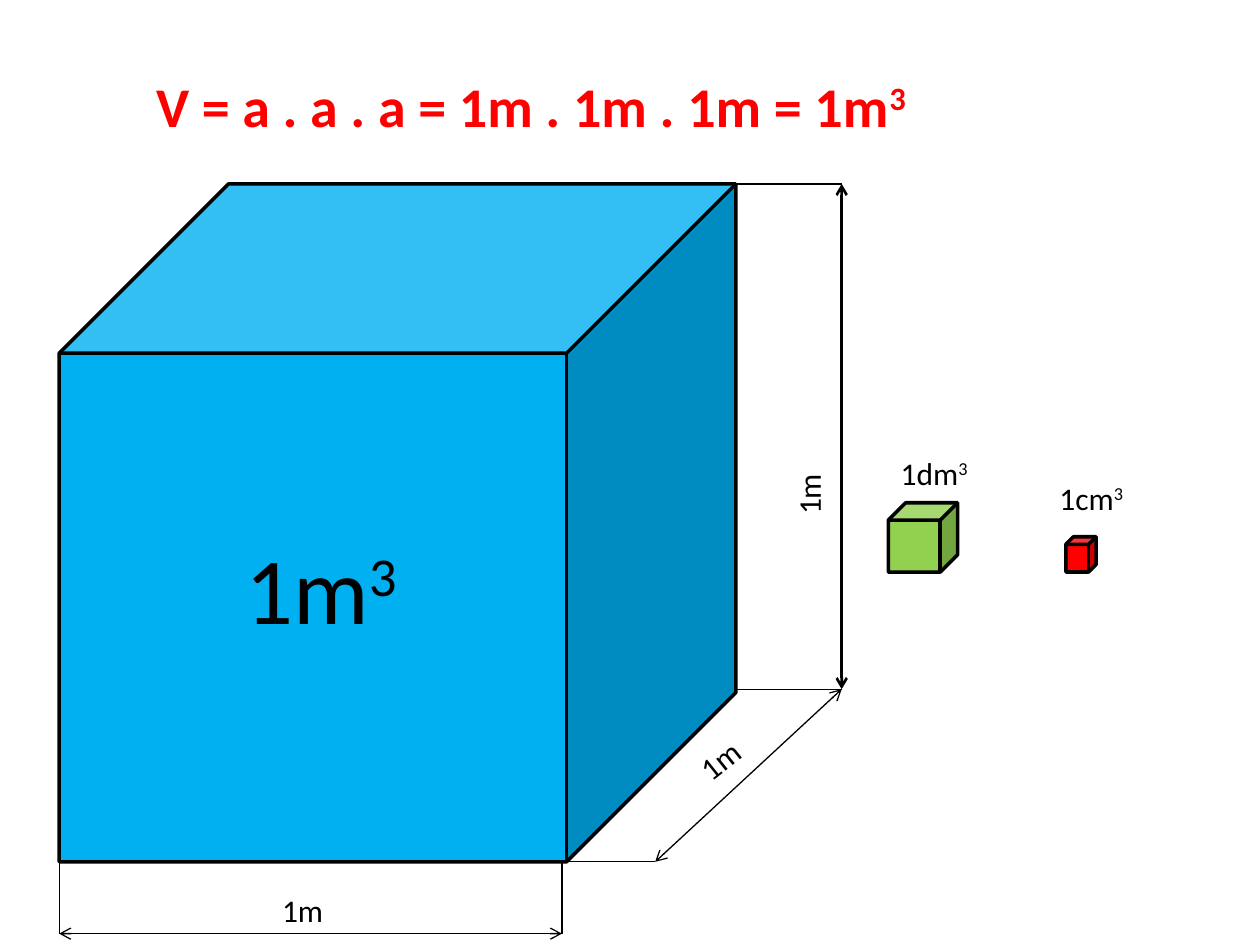
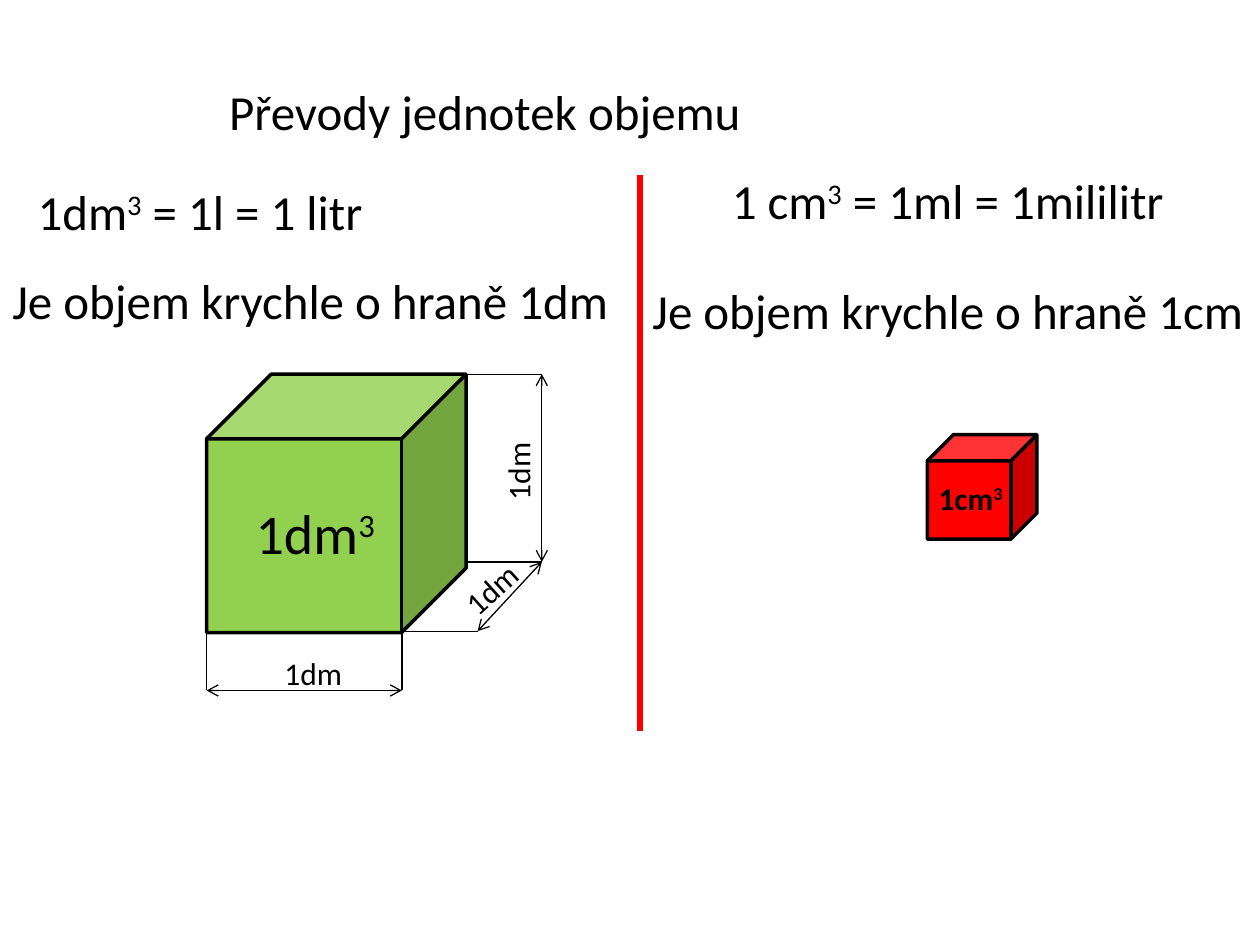
import dataclasses
import itertools

import pptx
import pptx.dml.color
import pptx.enum.shapes
import pptx.oxml.ns
import pptx.util
from lxml import etree

COLUMNS, ROWS = 100, 75
CELL = pptx.util.Inches(0.1)


@dataclasses.dataclass(frozen=True)
class Theme:
    """Colours, font and sizes shared by the slides."""
    font: str = "Calibri"
    ink: str = "000000"
    accent: str = "FF0000"
    metre: str = "00B0F0"
    decimetre: str = "92D050"
    centimetre: str = "FF0000"
    giant: float = 54
    formula: float = 32
    body: float = 28
    label: float = 18
    hairline: float = 0.75
    strong: float = 1.5
    outline: float = 2
    divider: float = 3


@dataclasses.dataclass(frozen=True)
class Dimensions:
    """Corners and labels of the measuring lines, in cells from a cube's corner."""
    near: tuple
    far: tuple
    edge: float
    base: float
    height_label: tuple
    depth_label: tuple
    depth_angle: float
    width_label: tuple
    height_weight: float = Theme.hairline


THEME = Theme()


def rgb(colour):
    """Turn a hex colour into an RGB value."""
    return pptx.dml.color.RGBColor.from_string(colour)


def cells(*counts):
    """Turn grid cells into slide lengths."""
    return [round(count * CELL) for count in counts]


def within(box, part):
    """Move a part's cells from a box's corner to the slide."""
    return (box[0] + part[0], box[1] + part[1], *part[2:])


def write(slide, box, parts, size=THEME.label, colour=THEME.ink, bold=False, angle=0):
    """Write one line whose every second part is raised."""
    caption = slide.shapes.add_textbox(*cells(*box))
    caption.rotation = angle
    paragraph = caption.text_frame.paragraphs[0]
    for part, raised in zip(parts, itertools.cycle((False, True))):
        run = paragraph.add_run()
        run.text = part
        run.font.name = THEME.font
        run.font.size = pptx.util.Pt(size)
        run.font.bold = bold
        run.font.color.rgb = rgb(colour)
        if raised:
            run._r.get_or_add_rPr().set("baseline", "30000")


def rule(slide, start, end, weight=THEME.hairline, colour=THEME.ink, arrows=False):
    """Draw a straight line, with an arrow at both ends if asked."""
    line = slide.shapes.add_connector(
        pptx.enum.shapes.MSO_CONNECTOR.STRAIGHT, *cells(*start, *end))
    line.line.width = pptx.util.Pt(weight)
    line.line.color.rgb = rgb(colour)
    if arrows:
        for tip in ("a:headEnd", "a:tailEnd"):
            etree.SubElement(line.line._get_or_add_ln(), pptx.oxml.ns.qn(tip), type="arrow")
    etree.SubElement(line._element.spPr, pptx.oxml.ns.qn("a:effectLst"))


def cube(slide, box, colour, label_box, unit, size=THEME.label, bold=False):
    """Draw a cube with its volume written relative to its corner."""
    solid = slide.shapes.add_shape(pptx.enum.shapes.MSO_SHAPE.CUBE, *cells(*box))
    solid.shadow.inherit = False
    solid.fill.solid()
    solid.fill.fore_color.rgb = rgb(colour)
    solid.line.color.rgb = rgb(THEME.ink)
    solid.line.width = pptx.util.Pt(THEME.outline)
    write(slide, within(box, label_box), ("1" + unit, "3"), size, bold=bold)


def measure(slide, box, unit, dims):
    """Draw the height, depth and width lines around a cube."""
    right, (far_x, far_y), (near_x, near_y) = box[2], dims.far, dims.near
    extensions = (
        ((right, 0), (far_x, 0)),
        ((right, far_y), dims.far),
        ((dims.edge, near_y), dims.near),
        ((0, near_y), (0, dims.base)),
        ((dims.edge, near_y), (dims.edge, dims.base)),
    )
    for start, end in extensions:
        rule(slide, within(box, start), within(box, end))
    spans = (
        ((far_x, 0), dims.far, dims.height_weight, dims.height_label, 270),
        (dims.near, dims.far, THEME.hairline, dims.depth_label, dims.depth_angle),
        ((0, dims.base), (dims.edge, dims.base), THEME.hairline, dims.width_label, 0),
    )
    for start, end, weight, label_box, angle in spans:
        rule(slide, within(box, start), within(box, end), weight, arrows=True)
        write(slide, within(box, label_box), ("1" + unit,), angle=angle)


def volume_slide(slide):
    """Show the cubic metre beside the smaller units."""
    metre = (4.7, 14.6, 53.7, 53.8)
    cube(slide, metre, THEME.metre, (13.8, 27, 21.3, 10.1), "m", THEME.giant)
    measure(slide, metre, "m", Dimensions(
        near=(47.3, 53.8), far=(62.1, 40.1), edge=39.9, base=59.5,
        height_label=(58.5, 20, 6.2, 8.3), height_weight=THEME.strong,
        depth_label=(51, 42.9, 6.3, 8.2), depth_angle=321.5,
        width_label=(16.7, 55.6, 6.3, 8.2)))
    write(slide, (11.4, 5.2, 75.6, 9.4), ("V = a . a . a = 1m . 1m . 1m = 1m", "3"),
          THEME.formula, THEME.accent, True)
    cube(slide, (70.5, 39.9, 5.5, 5.5), THEME.decimetre, (0, -4.4, 7.5, 7.1), "dm")
    cube(slide, (84.6, 42.6, 2.4, 2.8), THEME.centimetre, (-1.5, -5.1, 7.2, 7.1), "cm")


def conversion_slide(slide):
    """Compare the litre and the millilitre on two sides of a divider."""
    statements = (
        ((17.2, 6, 43.1, 5.7), ("Převody jednotek objemu",)),
        ((2, 13.9, 28.3, 8.8), ("1dm", "3", " = 1l = 1 litr")),
        ((0, 21, 49.8, 5.7), ("Je objem krychle o hraně 1dm",)),
        ((57.1, 13, 36.9, 8.8), ("1 cm", "3", " = 1ml = 1mililitr")),
        ((50.8, 21.8, 49.4, 8.8), ("Je objem krychle o hraně 1cm",)),
    )
    for box, parts in statements:
        write(slide, box, parts, THEME.body)
    rule(slide, (50.8, 13.9), (50.8, 58), THEME.divider, THEME.accent)
    decimetre = (16.4, 29.7, 20.6, 20.5)
    cube(slide, decimetre, THEME.decimetre, (2.9, 9.4, 11.8, 9.4), "dm", THEME.formula)
    measure(slide, decimetre, "dm", Dimensions(
        near=(21.5, 20.4), far=(26.6, 14.9), edge=15.5, base=25.1,
        height_label=(20.7, 5, 8, 4),
        depth_label=(19.1, 14.7, 7.6, 3.8), depth_angle=318,
        width_label=(5.2, 21.7, 10.3, 6.6)))
    cube(slide, (73.6, 34.5, 8.7, 8.3), THEME.centimetre, (-0.1, 3, 7.2, 7.1), "cm", bold=True)


def main():
    """Build both slides and save them."""
    deck = pptx.Presentation()
    deck.slide_width, deck.slide_height = cells(COLUMNS, ROWS)
    for fill_slide in (volume_slide, conversion_slide):
        fill_slide(deck.slides.add_slide(deck.slide_layouts[6]))
    deck.save("out.pptx")


if __name__ == "__main__":
    main()
